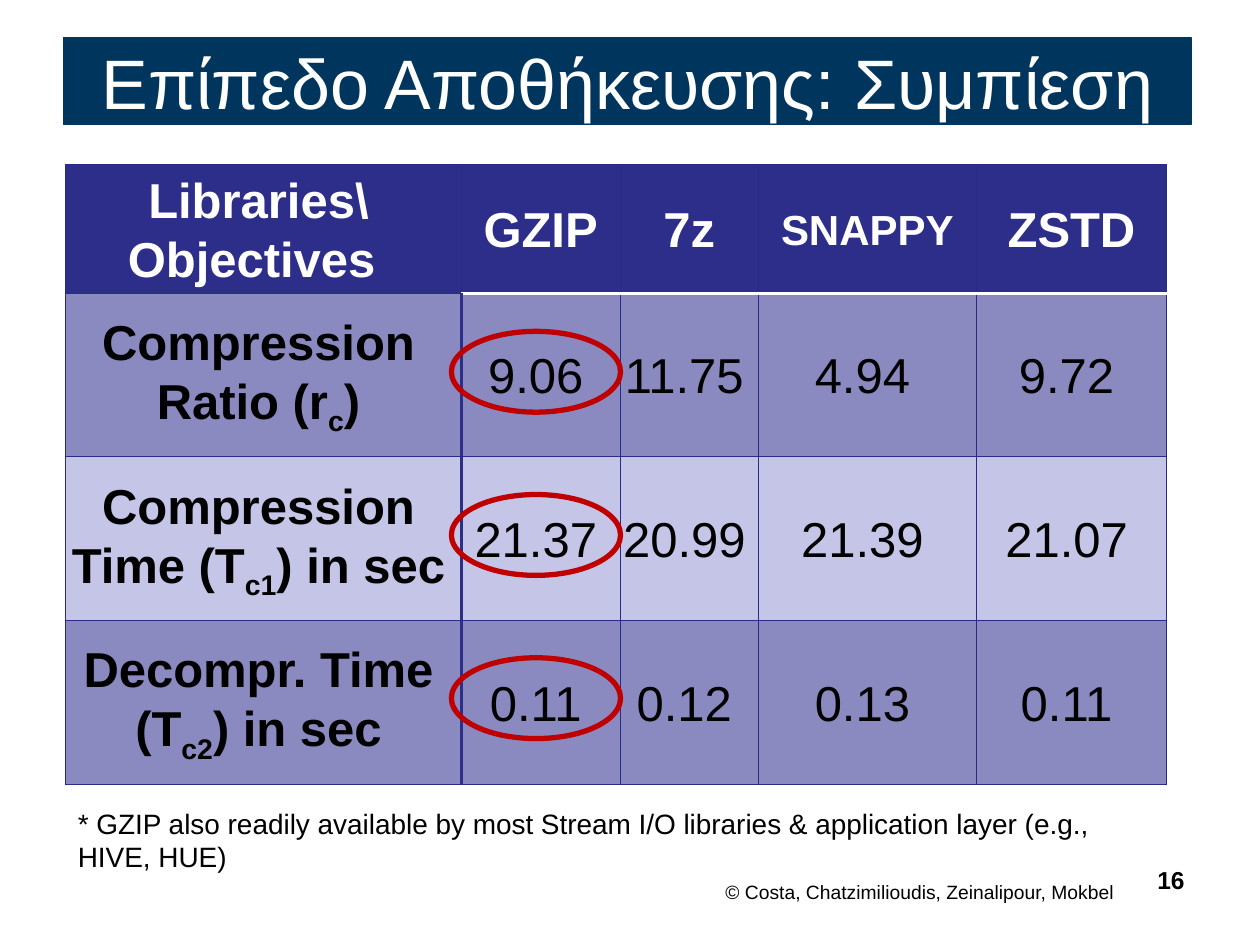
import pptx
import pptx.util
import pptx.dml.color
import pptx.enum.shapes
import pptx.enum.text
import pptx.oxml
import pptx.oxml.ns

Cm, Pt = pptx.util.Cm, pptx.util.Pt
RGBColor = pptx.dml.color.RGBColor
SHAPE = pptx.enum.shapes.MSO_SHAPE
ALIGN = pptx.enum.text.PP_ALIGN
MIDDLE = pptx.enum.text.MSO_ANCHOR.MIDDLE

WHITE = RGBColor(0xFF, 0xFF, 0xFF)
BLACK = RGBColor(0x00, 0x00, 0x00)
TITLE_BLUE = RGBColor(0x00, 0x35, 0x5E)
HEADER_BLUE = RGBColor(0x2D, 0x2D, 0x8A)
GRID_BLUE = RGBColor(0x2A, 0x2A, 0x89)
DARK_BAND = RGBColor(0x8A, 0x8A, 0xC1)
LIGHT_BAND = RGBColor(0xC5, 0xC5, 0xE8)
RING_RED = RGBColor(0xC0, 0x00, 0x00)

TITLE = "Επίπεδο Αποθήκευσης: Συμπίεση"
FOOTNOTE = ("* GZIP also readily available by most Stream I/O libraries "
            "& application layer (e.g., HIVE, HUE)")
COPYRIGHT = "© Costa, Chatzimilioudis, Zeinalipour, Mokbel"
PAGE_NUMBER = "16"

HEADER = ["Libraries\\\nObjectives ", "GZIP", "7z", "SNAPPY", "ZSTD"]
# Each row label is: text, subscript, text
ROWS = [
    (("Compression Ratio (r", "c", ")"), ["9.06", "11.75", "4.94", "9.72"]),
    (("Compression Time (T", "c1", ") in sec"), ["21.37", "20.99", "21.39", "21.07"]),
    (("Decompr. Time (T", "c2", ") in sec"), ["0.11", "0.12", "0.13", "0.11"]),
]
COLUMN_WIDTHS = [7.98, 3.2, 2.79, 4.39, 3.84]
HEADER_HEIGHT, ROW_HEIGHT = 2.59, 3.3
TABLE_LEFT, TABLE_TOP = 1.32, 3.32


def style(paragraph, size, color, bold=False, align=ALIGN.LEFT):
    paragraph.alignment = align
    font = paragraph.font
    font.name, font.size, font.bold = "Arial", Pt(size), bold
    font.color.rgb = color


def add_text(page, text, place, size, bold=False, align=ALIGN.LEFT):
    box = page.shapes.add_textbox(*map(Cm, place))
    box.text_frame.word_wrap = True
    box.text_frame.text = text
    style(box.text_frame.paragraphs[0], size, BLACK, bold, align)


def set_borders(cell, row, column):
    """Thin grid, white rule under the header, thick rule after the labels."""
    thin, thick, white = (GRID_BLUE, 0.75), (HEADER_BLUE, 2), (WHITE, 2)
    sides = {"lnL": thin, "lnR": thin, "lnT": thin, "lnB": thin}
    if column > 0 and row < 2:
        sides["lnB" if row == 0 else "lnT"] = white
    if row > 0 and column < 2:
        sides["lnR" if column == 0 else "lnL"] = thick
    properties = cell._tc.get_or_add_tcPr()
    for index, (side, (color, width)) in enumerate(sides.items()):
        properties.insert(index, pptx.oxml.parse_xml(
            f'<a:{side} {pptx.oxml.ns.nsdecls("a")} w="{Pt(width)}"><a:solidFill>'
            f'<a:srgbClr val="{color}"/></a:solidFill></a:{side}>'))


def fill_cell(cell, row, column, content):
    is_header, is_label = row == 0, column == 0
    cell.margin_left = Cm(0.2 if is_header and not is_label else 0)
    cell.margin_right = Cm(0.2)
    cell.margin_top = cell.margin_bottom = 0
    cell.vertical_anchor = MIDDLE
    cell.fill.solid()
    cell.fill.fore_color.rgb = (
        HEADER_BLUE if is_header else DARK_BAND if row % 2 else LIGHT_BAND)
    if isinstance(content, tuple):
        paragraph = cell.text_frame.paragraphs[0]
        for part in content:
            paragraph.add_run().text = part
        paragraph.runs[1]._r.get_or_add_rPr().set("baseline", "-25000")
    else:
        cell.text_frame.text = content
    for paragraph in cell.text_frame.paragraphs:
        paragraph.line_spacing = 1.07
        style(paragraph, 24 if content == "SNAPPY" else 28,
              WHITE if is_header else BLACK, is_header or is_label, ALIGN.CENTER)
    set_borders(cell, row, column)


def add_results_table(page):
    lines = [HEADER] + [[label] + values for label, values in ROWS]
    heights = [HEADER_HEIGHT] + [ROW_HEIGHT] * len(ROWS)
    table = page.shapes.add_table(
        len(lines), len(HEADER), Cm(TABLE_LEFT), Cm(TABLE_TOP),
        Cm(sum(COLUMN_WIDTHS)), Cm(sum(heights))).table
    for column, width in zip(table.columns, COLUMN_WIDTHS):
        column.width = Cm(width)
    for row, height in zip(table.rows, heights):
        row.height = Cm(height)
    for row, line in enumerate(lines):
        for column, content in enumerate(line):
            fill_cell(table.cell(row, column), row, column, content)


def main():
    deck = pptx.Presentation()
    deck.slide_width, deck.slide_height = Cm(25.4), Cm(19.05)
    page = deck.slides.add_slide(deck.slide_layouts[6])

    add_text(page, COPYRIGHT, (13.77, 17.63, 9.55, 0.74), 11, align=ALIGN.CENTER)
    add_text(page, PAGE_NUMBER, (22.71, 17.32, 1.42, 1.32), 14, True, ALIGN.RIGHT)

    banner = page.shapes.add_shape(
        SHAPE.RECTANGLE, Cm(1.28), Cm(0.76), Cm(22.73), Cm(1.75))
    banner.shadow.inherit = False
    banner.fill.solid()
    banner.fill.fore_color.rgb = banner.line.color.rgb = TITLE_BLUE
    banner.line.width = Pt(0.75)
    banner.text_frame.word_wrap = True
    banner.text_frame.vertical_anchor = MIDDLE
    banner.text_frame.text = TITLE
    style(banner.text_frame.paragraphs[0], 40, WHITE, align=ALIGN.CENTER)

    add_results_table(page)

    for index in range(len(ROWS)):
        ring = page.shapes.add_shape(
            SHAPE.OVAL, Cm(9.1), Cm(6.68 + index * 3.29), Cm(3.41), Cm(1.63))
        ring.shadow.inherit = False
        ring.fill.background()
        ring.line.color.rgb = RING_RED
        ring.line.width = Pt(3)

    add_text(page, FOOTNOTE, (TABLE_LEFT, 16.13, 22.2, 1.63), 16)
    deck.save("out.pptx")


if __name__ == "__main__":
    main()
